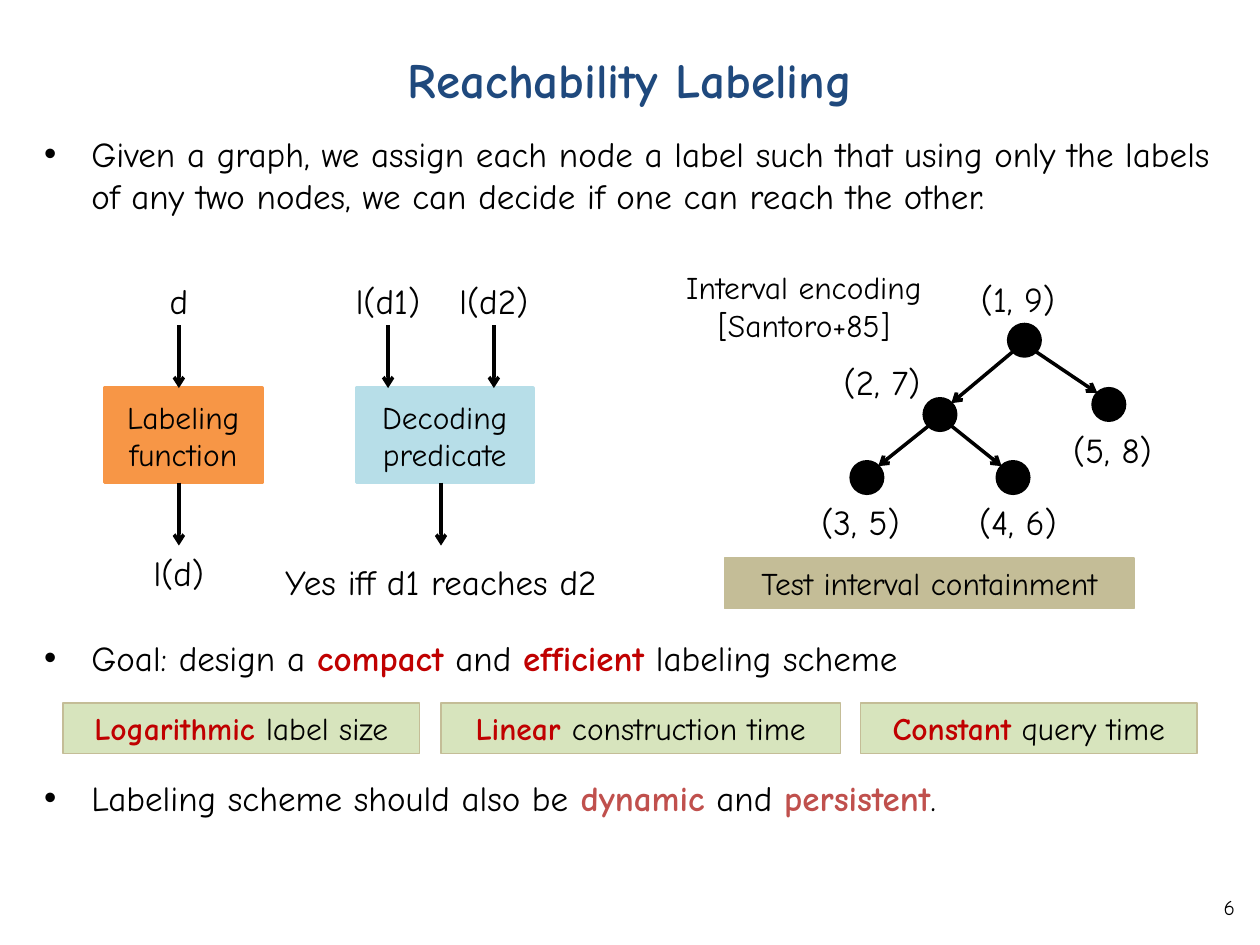
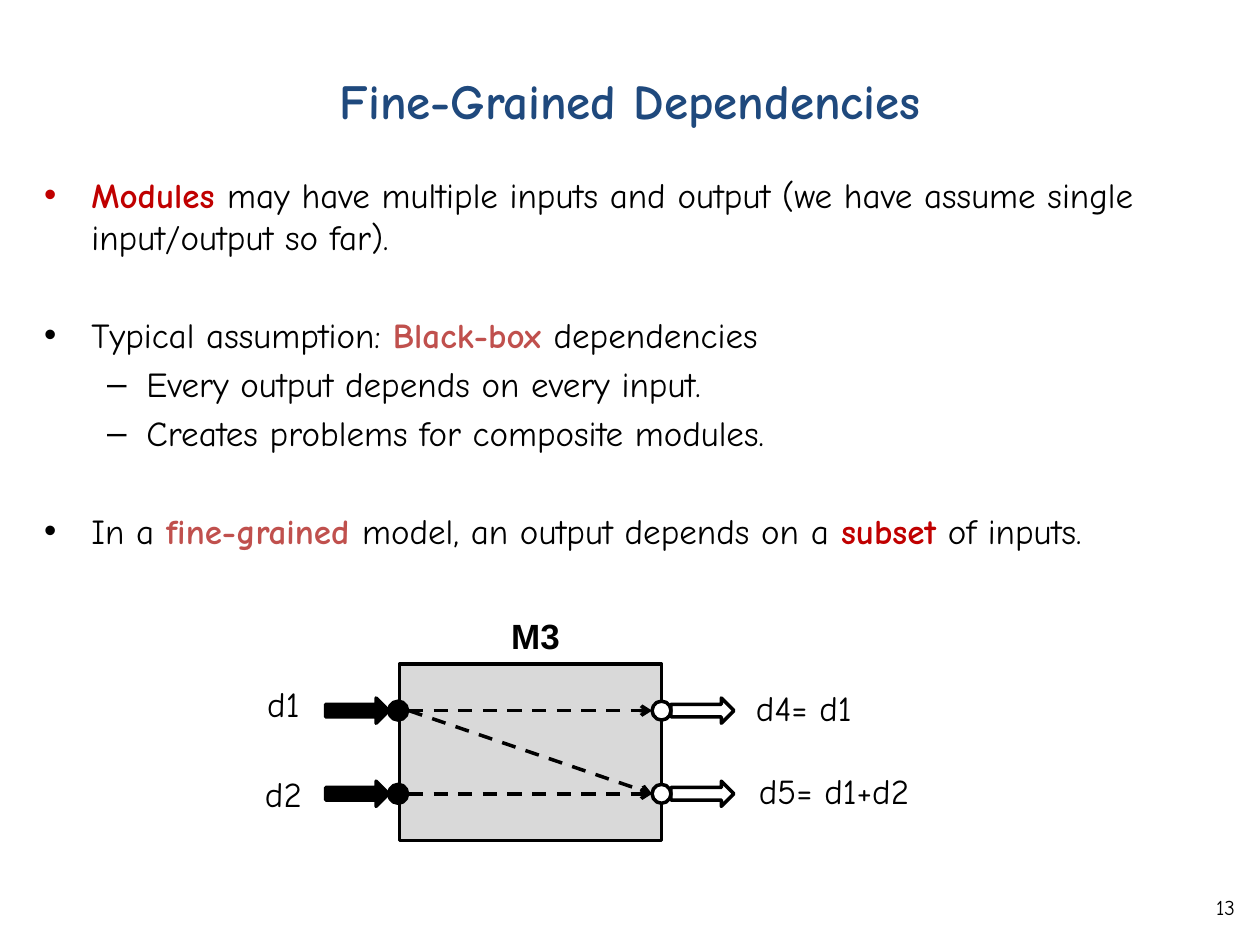
from pptx import Presentation
from pptx.dml.color import RGBColor
from pptx.enum.dml import MSO_LINE
from pptx.enum.shapes import MSO_CONNECTOR, MSO_SHAPE
from pptx.enum.text import MSO_ANCHOR, MSO_AUTO_SIZE, PP_ALIGN
from pptx.oxml.ns import qn
from pptx.util import Inches, Pt
from lxml import etree

RECT, DOT, ARROW = MSO_SHAPE.RECTANGLE, MSO_SHAPE.FLOWCHART_CONNECTOR, MSO_SHAPE.RIGHT_ARROW
STRAIGHT, DASH = MSO_CONNECTOR.STRAIGHT, MSO_LINE.DASH
CENTER, RIGHT = PP_ALIGN.CENTER, PP_ALIGN.RIGHT
TOP, MIDDLE = MSO_ANCHOR.TOP, MSO_ANCHOR.MIDDLE
NO_FIT = MSO_AUTO_SIZE.NONE

FONT = "Comic Neue"
BLACK, WHITE, NAVY, RED, ROSE = "000000", "FFFFFF", "1F497D", "C00000", "C0504D"
ORANGE, SKY, TAN, GREEN, GRAY = "F79646", "B7DEE8", "C4BD97", "D7E4BD", "D9D9D9"

LABELING = {
    "title": "Reachability Labeling", "title_top": 0.25, "body_top": 1, "number": "6",
    "body": [
        (0, 4, 1, [("Given a graph, we assign each node a label such that using only the labels "
                    "of any two nodes, we can decide if one can reach the other.",)]),
        (0, 228, 1.5, [("Goal: design a ",), ("compact", RED), (" and ",), ("efficient", RED),
                       (" labeling scheme",)]),
        (0, 44, 1.5, [("Labeling scheme should also be ",), ("dynamic", ROSE), (" and ",),
                      ("persistent", ROSE), (".",)]),
    ],
}
DEPENDENCIES = {
    "title": "Fine-Grained Dependencies", "title_top": 0.42, "body_top": 1.33, "number": "13",
    "body": [
        (0, 4, 1, [("Modules ", RED), ("may have multiple inputs and output "
                                       "(we have assume single input/output so far).",)]),
        (0, 32, 1, [("Typical assumption: ",), ("Black-box ", ROSE), ("dependencies",)]),
        (1, 4, 1, [("Every output depends on every input.",)]),
        (1, 4, 1, [("Creates problems for composite modules.",)]),
        (0, 32, 1, [("In a ",), ("fine-grained ", ROSE), ("model, an output depends on a ",),
                    ("subset", RED), (" of inputs.",)]),
    ],
}

FLOW_BOXES = [("Labeling function", 0.83, 1.25, ORANGE), ("Decoding predicate", 2.83, 1.4, SKY)]
FLOW_TOP, FLOW_H, FLOW_ARROW = 3.08, 0.75, 0.5
FLOW_INPUTS = [("d", 1.42, 0.5), ("l(d1)", 3.08, 0.83), ("l(d2)", 3.92, 0.83)]
FLOW_OUTPUTS = [("l(d)", 1.42, 4.33, 0.67), ("Yes iff d1 reaches d2", 3.5, 4.4, 3.08)]

TREE_NODES = {
    "(1, 9)": (8.13, 2.7, 8.08, 2.15),
    "(2, 7)": (7.46, 3.29, 7, 2.81),
    "(5, 8)": (8.8, 3.21, 8.83, 3.35),
    "(3, 5)": (6.88, 3.79, 6.83, 3.92),
    "(4, 6)": (8.04, 3.79, 8.08, 3.92),
}
TREE_EDGES = [("(1, 9)", "(2, 7)"), ("(1, 9)", "(5, 8)"),
              ("(2, 7)", "(3, 5)"), ("(2, 7)", "(4, 6)")]
NODE_SIZE, NODE_CORNER = 0.25, 0.09

COSTS = [
    (0.5, 2.83, [("Logarithmic ", RED), ("label size",)]),
    (3.5, 3.17, [("Linear ", RED), ("construction time",)]),
    (6.83, 2.67, [("Constant", RED), (" query time",)]),
]

MODULE_X, MODULE_W = 3.17, 2.08
PORT_YS, PORT_SIZE = (5.64, 6.3), 0.15
PORT_LABELS = [("d1", 2.25, 5.37, 0.67), ("d2", 2.25, 6.08, 0.67),
               ("d4= d1", 6.38, 5.4, 1.25), ("d5= d1+d2", 6.62, 6.06, 1.57)]
PORT_LINKS = [(0, 0), (0, 1), (1, 1)]
BLOCK_W, BLOCK_H = 0.5, 0.2


def rgb(color):
    return RGBColor.from_string(color)


def add_runs(p, runs, size, font=FONT):
    for text, *accent in runs:
        r = p.add_run()
        r.text = text
        r.font.name, r.font.size = font, Pt(size)
        r.font.bold = bool(accent)
        r.font.color.rgb = rgb(accent[0] if accent else BLACK)


def place(sp, x, y, w, h):
    sp.left, sp.top, sp.width, sp.height = (Inches(v) for v in (x, y, w, h))


def set_text(sp, runs, size, align=CENTER, anchor=MIDDLE, font=FONT):
    tf = sp.text_frame
    tf.word_wrap, tf.auto_size, tf.vertical_anchor = True, NO_FIT, anchor
    p = tf.paragraphs[0]
    p.alignment = align
    add_runs(p, runs, size, font)


def add_label(s, runs, cx, y, w, h=0.44, size=20, font=FONT):
    sp = s.shapes.add_textbox(Inches(cx - w / 2), Inches(y), Inches(w), Inches(h))
    set_text(sp, runs, size, anchor=TOP, font=font)


def add_box(s, kind, x, y, w, h, fill, line=BLACK, width=2, runs=()):
    sp = s.shapes.add_shape(kind, Inches(x), Inches(y), Inches(w), Inches(h))
    sp.shadow.inherit = False
    if fill:
        sp.fill.solid()
        sp.fill.fore_color.rgb = rgb(fill)
    else:
        sp.fill.background()
    sp.line.color.rgb = rgb(line)
    sp.line.width = Pt(width)
    if runs:
        set_text(sp, runs, 18)


def add_dot(s, cx, cy, size, fill=BLACK):
    add_box(s, DOT, cx - size / 2, cy - size / 2, size, size, fill)


def add_arrow(s, x1, y1, x2, y2, dashed=False):
    c = s.shapes.add_connector(STRAIGHT, Inches(x1), Inches(y1), Inches(x2), Inches(y2))
    c.line.color.rgb = rgb(BLACK)
    c.line.width = Pt(2)
    if dashed:
        c.line.dash_style = DASH
    etree.SubElement(c.line._get_or_add_ln(), qn("a:tailEnd"), type="arrow")
    etree.SubElement(c._element.spPr, qn("a:effectLst"))


def add_slide(prs, content):
    s = prs.slides.add_slide(prs.slide_layouts[1])
    title, body = s.placeholders
    place(title, 0.25, content["title_top"], 9.5, 0.75)
    set_text(title, [(content["title"], NAVY)], 28)

    place(body, 0.25, content["body_top"], 9.5, 6)
    tf = body.text_frame
    tf.auto_size, tf.vertical_anchor = NO_FIT, TOP
    for i, (level, before, spacing, runs) in enumerate(content["body"]):
        p = tf.add_paragraph() if i else tf.paragraphs[0]
        p.level, p.space_before, p.line_spacing = level, Pt(before), float(spacing)
        add_runs(p, runs, 20)

    number = s.shapes.add_textbox(Inches(9.45), Inches(7), Inches(0.45), Inches(0.4))
    set_text(number, [(content["number"],)], 12, align=RIGHT)
    return s


def draw_flow(s):
    bottom = FLOW_TOP + FLOW_H
    for text, x, w, color in FLOW_BOXES:
        add_box(s, RECT, x, FLOW_TOP, w, FLOW_H, color, color, runs=[(text,)])
    for text, cx, w in FLOW_INPUTS:
        add_arrow(s, cx, FLOW_TOP - FLOW_ARROW, cx, FLOW_TOP)
        add_label(s, [(text,)], cx, 2.17, w)
    for text, cx, y, w in FLOW_OUTPUTS:
        add_arrow(s, cx, bottom, cx, bottom + FLOW_ARROW)
        add_label(s, [(text,)], cx, y, w)


def draw_tree(s):
    for text, (cx, cy, label_cx, label_y) in TREE_NODES.items():
        add_dot(s, cx, cy, NODE_SIZE)
        add_label(s, [(text,)], label_cx, label_y, 1)
    for parent, child in TREE_EDGES:
        x1, y1 = TREE_NODES[parent][:2]
        x2, y2 = TREE_NODES[child][:2]
        dx = NODE_CORNER if x2 > x1 else -NODE_CORNER
        add_arrow(s, x1 + dx, y1 + NODE_CORNER, x2 - dx, y2 - NODE_CORNER)
    add_label(s, [("Interval encoding [Santoro+85]",)], 6.38, 2.08, 2.42, 0.71, 18)
    add_box(s, RECT, 5.75, 4.43, 3.25, 0.4, TAN, TAN, 0.75, [("Test interval containment",)])


def draw_costs(s):
    for x, w, runs in COSTS:
        add_box(s, RECT, x, 5.58, w, 0.4, GREEN, TAN, 0.75, runs)


def draw_module(s):
    right, r = MODULE_X + MODULE_W, PORT_SIZE / 2
    add_box(s, RECT, MODULE_X, 5.27, MODULE_W, 1.4, GRAY)
    add_label(s, [("M3", BLACK)], 4.25, 4.83, 0.67, font="Arial")
    for y in PORT_YS:
        top = y - BLOCK_H / 2
        add_dot(s, MODULE_X - 0.01, y, PORT_SIZE)
        add_dot(s, right, y, PORT_SIZE, WHITE)
        add_box(s, ARROW, MODULE_X - r - BLOCK_W - 0.01, top, BLOCK_W, BLOCK_H, BLACK)
        add_box(s, ARROW, right + r, top, BLOCK_W, BLOCK_H, None)
    for start, end in PORT_LINKS:
        add_arrow(s, MODULE_X + r, PORT_YS[start], right - r, PORT_YS[end], dashed=True)
    for text, cx, y, w in PORT_LABELS:
        add_label(s, [(text,)], cx, y, w)


def main():
    prs = Presentation()
    prs.slide_width, prs.slide_height = Inches(10), Inches(7.5)
    s = add_slide(prs, LABELING)
    draw_flow(s)
    draw_tree(s)
    draw_costs(s)
    draw_module(add_slide(prs, DEPENDENCIES))
    prs.save("out.pptx")


if __name__ == "__main__":
    main()
